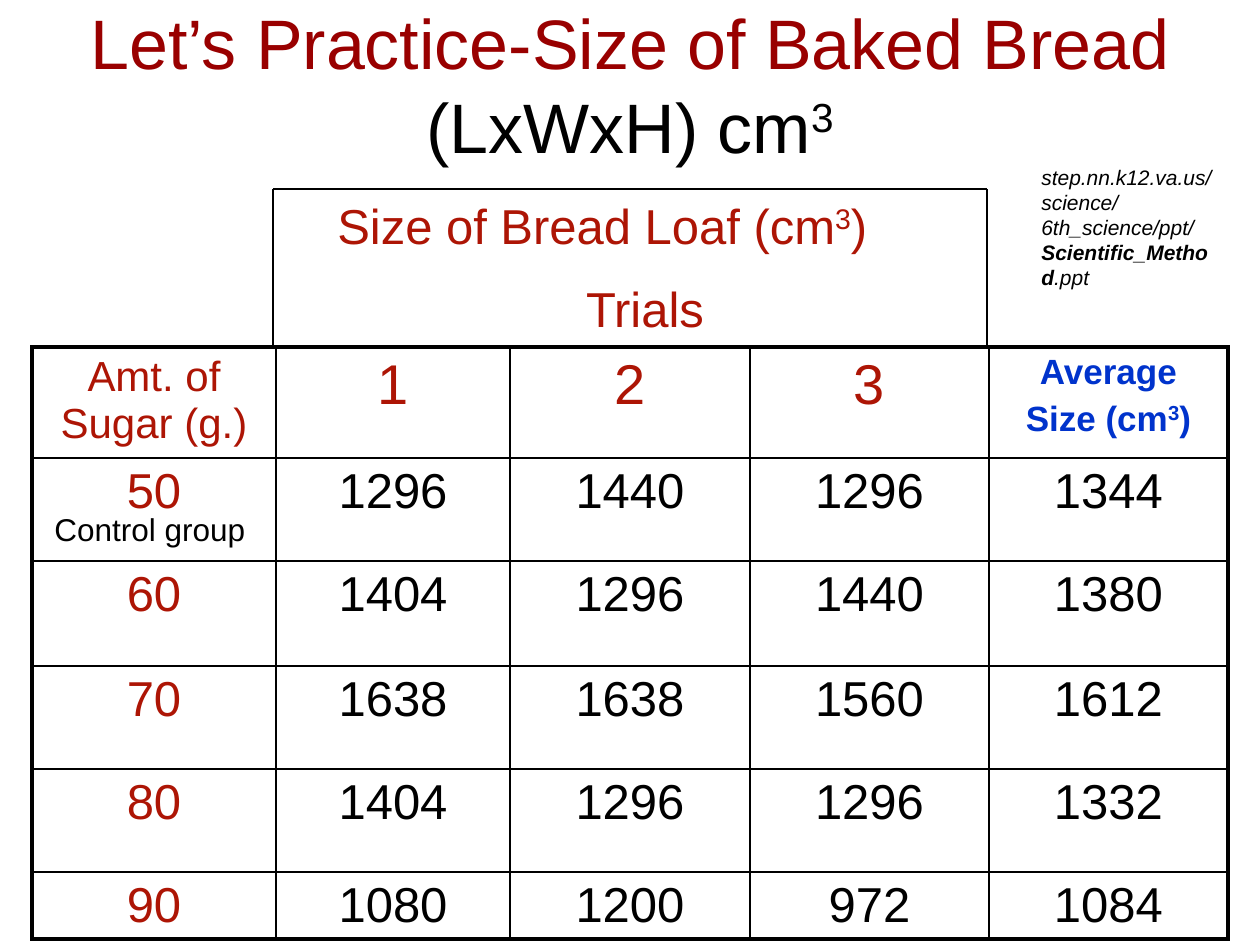
from dataclasses import dataclass
from lxml import etree
from pptx import Presentation
from pptx.dml.color import RGBColor
from pptx.enum.shapes import MSO_CONNECTOR
from pptx.enum.text import MSO_ANCHOR, MSO_AUTO_SIZE, PP_ALIGN
from pptx.oxml.ns import qn
from pptx.util import Pt

LEFT, MID = PP_ALIGN.LEFT, PP_ALIGN.CENTER
LINE = MSO_CONNECTOR.STRAIGHT
GROW, FIXED = MSO_AUTO_SIZE.SHAPE_TO_FIT_TEXT, MSO_AUTO_SIZE.NONE
CENTER = MSO_ANCHOR.MIDDLE


@dataclass(frozen=True)
class Theme:
    font: str = "Arial"
    dark: str = "990000"
    red: str = "AD1505"
    blue: str = "0033CC"
    black: str = "000000"
    title: int = 40
    trial: int = 32
    body: int = 28
    label: int = 24
    mean: int = 20
    note: int = 18
    cite: int = 12
    thin: float = 0.75
    inner: float = 1
    outer: float = 2.25


T = Theme()
UP = {"base": 30}

TITLE = [[("Let’s Practice-Size of Baked Bread", {"color": T.dark}),
          " (LxWxH) cm", ("3", UP)]]
SPAN = [["Size of Bread Loaf (cm", ("3", UP), ")"]]
TRIALS = [["Trials"]]
NOTE = [["Control group"]]
CITE = [["step.nn.k12.va.us/science/6th_science/ppt/",
         ("Scientific", {"bold": True}), "_",
         ("Method", {"bold": True}), ".ppt"]]
HEAD = [
    ([["Amt. of Sugar (g.)"]], {"size": T.label, "color": T.red}),
    *[([[n]], {"size": T.trial, "color": T.red}) for n in "123"],
    ([["Average"], ["Size (cm", ("3", UP), ")"]],
     {"size": T.mean, "color": T.blue, "bold": True}),
]
DATA = [
    (50, 1296, 1440, 1296, 1344),
    (60, 1404, 1296, 1440, 1380),
    (70, 1638, 1638, 1560, 1612),
    (80, 1404, 1296, 1296, 1332),
    (90, 1080, 1200, 972, 1084),
]
COLS = [244, 234, 240, 239, 239]
ROWS = [111, 103, 105, 103, 103, 67]
GRID = (32, 347)
PATH = [(273, 347), (273, 189), (987, 189), (987, 347)]


def px(n):
    return round(n * 914400 / 126)


def write(frame, paras, size=T.body, color=T.black, bold=False,
          italic=False, aligns=(MID,), gap=0):
    for i, parts in enumerate(paras):
        para = frame.paragraphs[0] if i == 0 else frame.add_paragraph()
        para.alignment = aligns[min(i, len(aligns) - 1)]
        para.space_before = Pt(round(size * gap, 2))
        for part in parts:
            text, own = (part, {}) if isinstance(part, str) else part
            run = para.add_run()
            run.text = text
            font = run.font
            font.name, font.size = T.font, Pt(size)
            font.bold, font.italic = own.get("bold", bold), italic
            font.color.rgb = RGBColor.from_string(own.get("color", color))
            if "base" in own:
                run._r.get_or_add_rPr().set("baseline", str(own["base"] * 1000))


def box(slide, area, paras, **form):
    frame = slide.shapes.add_textbox(*map(px, area)).text_frame
    frame.word_wrap = True
    frame.auto_size = GROW
    write(frame, paras, gap=0.5, **form)


def edge(cell, widths):
    props = cell._tc.get_or_add_tcPr()
    for side, width in widths.items():
        line = etree.SubElement(props, qn(f"a:ln{side}"), w=str(Pt(width)))
        fill = etree.SubElement(line, qn("a:solidFill"))
        etree.SubElement(fill, qn("a:srgbClr"), val=T.black)


def table(slide):
    cells = [HEAD] + [
        [([[str(v)]], {"color": T.black if c else T.red})
         for c, v in enumerate(row)] for row in DATA]
    area = (*GRID, sum(COLS), sum(ROWS))
    grid = slide.shapes.add_table(len(ROWS), len(COLS), *map(px, area)).table
    grid.first_row = grid.horz_banding = False
    for col, wide in zip(grid.columns, COLS):
        col.width = px(wide)
    for row, high in zip(grid.rows, ROWS):
        row.height = px(high)
    for r, row in enumerate(cells):
        for c, (paras, form) in enumerate(row):
            cell = grid.cell(r, c)
            rim = {"L": c == 0, "R": c == len(COLS) - 1,
                   "T": r == 0, "B": r == len(ROWS) - 1}
            edge(cell, {s: T.outer if out else T.inner
                        for s, out in rim.items()})
            cell.fill.background()
            write(cell.text_frame, paras, gap=0.2, **form)


def main():
    deck = Presentation()
    deck.slide_width, deck.slide_height = px(1260), px(945)
    slide = deck.slides.add_slide(deck.slide_layouts[5])

    title = slide.shapes.title
    title.left, title.top, title.width, title.height = map(
        px, (63, 21, 1134, 126))
    title.text_frame.auto_size = FIXED
    title.text_frame.vertical_anchor = CENTER
    write(title.text_frame, TITLE, size=T.title)

    table(slide)
    for start, end in zip(PATH, PATH[1:]):
        line = slide.shapes.add_connector(LINE, *map(px, start + end))
        line.line.color.rgb = RGBColor.from_string(T.black)
        line.line.width = Pt(T.thin)
        etree.SubElement(line._element.spPr, qn("a:effectLst"))

    box(slide, (325, 189, 640, 160), SPAN + TRIALS, color=T.red,
        aligns=(LEFT, MID))
    box(slide, (42, 504, 231, 50), NOTE, size=T.note, aligns=(LEFT,))
    box(slide, (1029, 158, 199, 113), CITE, size=T.cite, italic=True,
        aligns=(LEFT,))
    deck.save("out.pptx")


if __name__ == "__main__":
    main()
